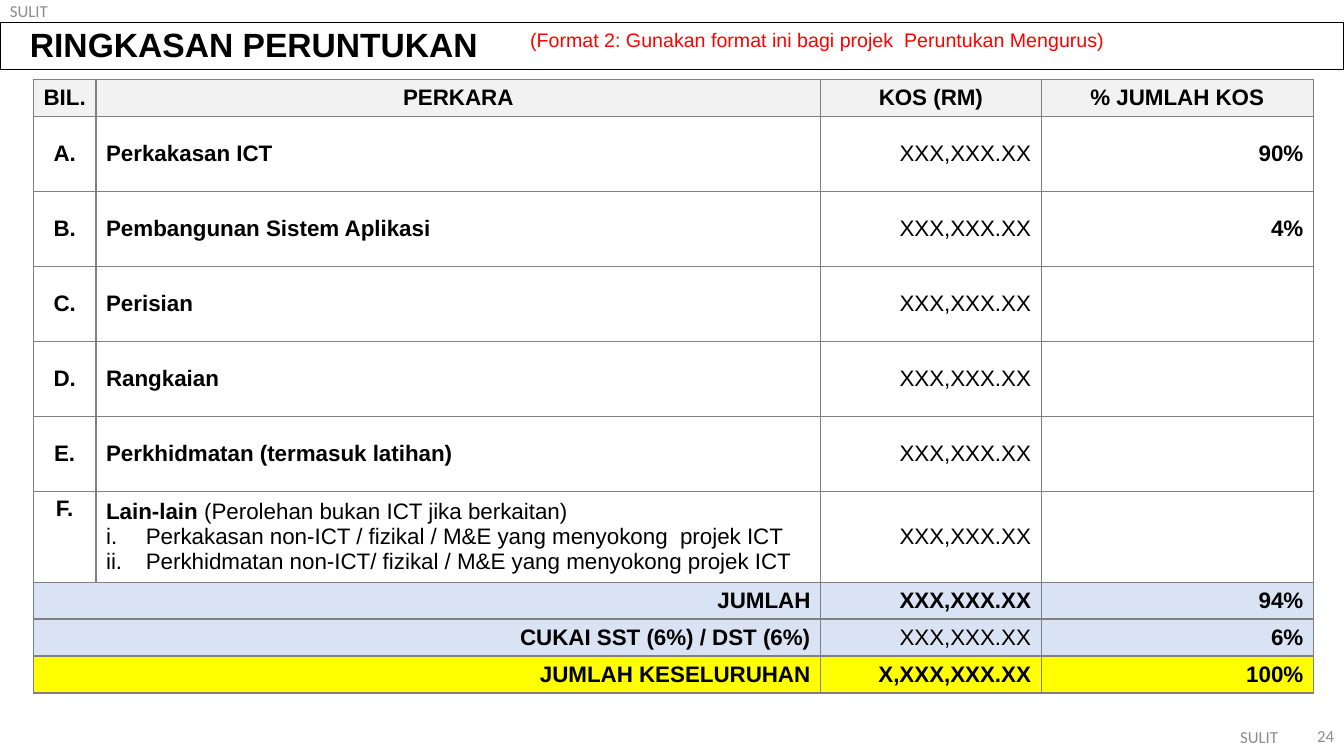
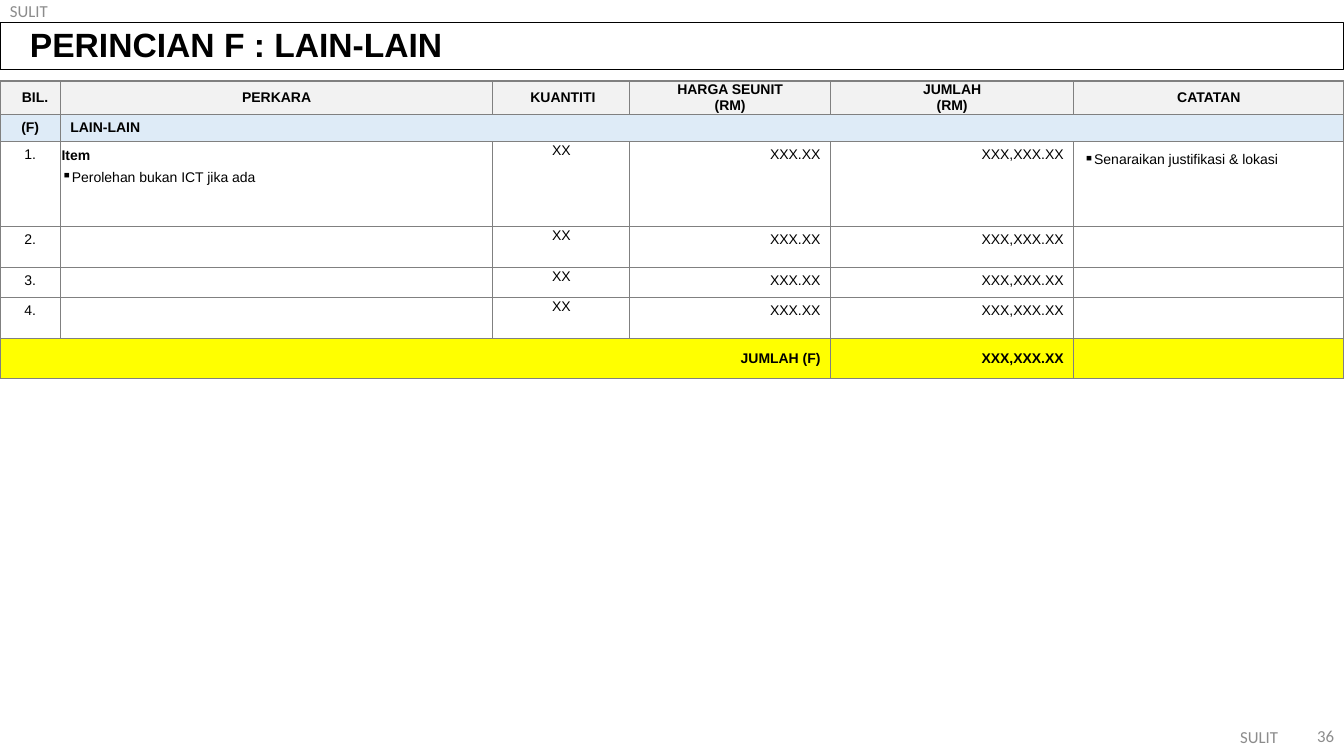
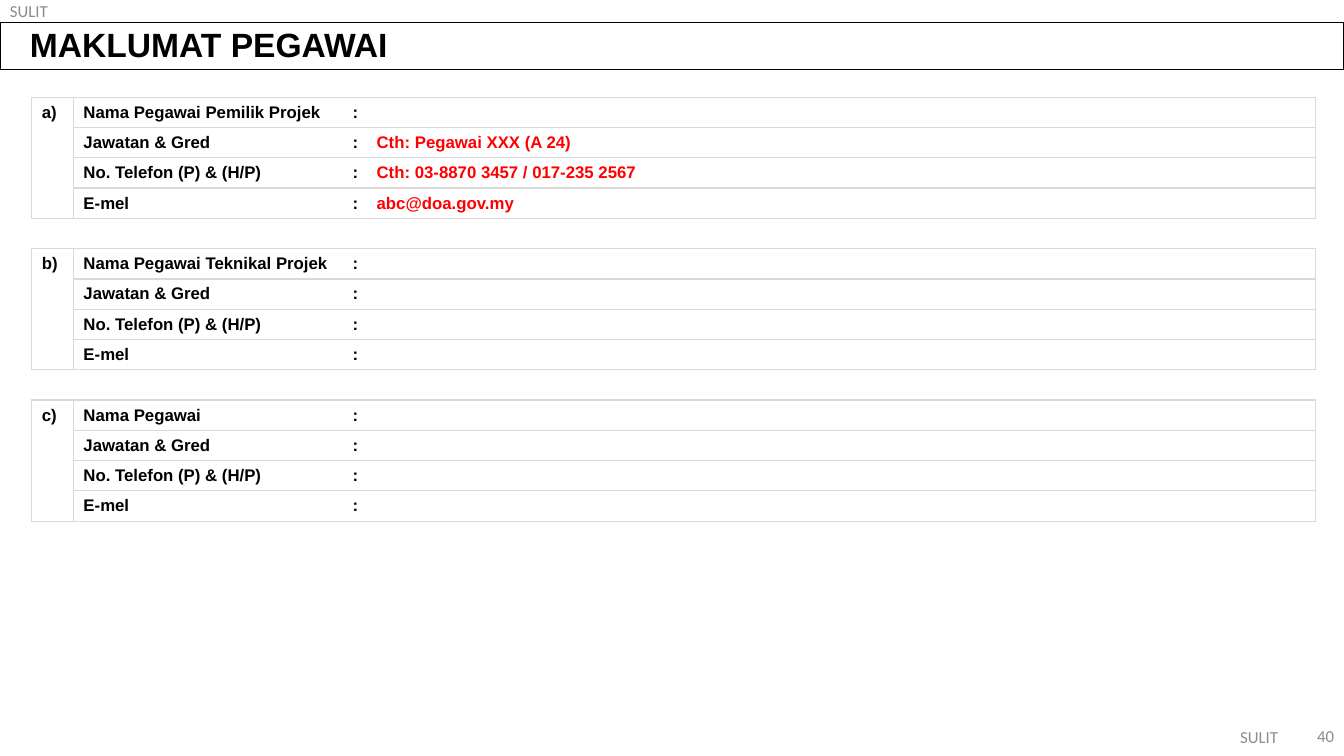
from lxml import etree
from pptx import Presentation, util as u
from pptx.dml.color import RGBColor
from pptx.enum import text as t
from pptx.oxml.ns import qn

Cm = u.Cm


class Theme:
    black, red, gray = "000000", "FF0000", "8C8C8C"
    line, pale = "808080", "D9D9D9"
    head, blue, sky, gold = "F2F2F2", "DAE3F3", "DEEBF7", "FFFF00"
    sans, foot = "Arial", "Calibri"
    title, note, big, mid, small = 24, 14, 16, 12, 10


ALIGN = {"l": t.PP_ALIGN.LEFT, "c": t.PP_ALIGN.CENTER, "r": t.PP_ALIGN.RIGHT}
ANCHOR = {"t": t.MSO_ANCHOR.TOP, "m": t.MSO_ANCHOR.MIDDLE}
# Line prefix: indent, bullet tag, bullet attributes
MARKS = {
    "▪ ": (Cm(0.25), "a:buChar", {"char": "▪"}),
    "# ": (Cm(1), "a:buAutoNum", {"type": "romanLcPeriod"}),
}


def write(frame, words, size, al="l", ink=Theme.black, face=Theme.sans,
          space=None, left=0):
    """Fill a frame line by line; **text** is bold."""
    frame.word_wrap = True
    for i, line in enumerate(words.split("\n")):
        par = frame.add_paragraph() if i else frame.paragraphs[0]
        par.alignment = ALIGN[al]
        if space:
            par.line_spacing = space
        props = par._p.get_or_add_pPr()
        if left:
            props.set("marL", str(left))
        if line[:2] in MARKS:
            pad, tag, attrs = MARKS[line[:2]]
            props.set("marL", str(pad))
            props.set("indent", str(-pad))
            etree.SubElement(props, qn(tag), attrs)
            line = line[2:]
        for j, part in enumerate(line.split("**")):
            if part:
                run = par.add_run()
                run.text = part
                look = {"size": u.Pt(size), "name": face, "bold": j % 2 == 1}
                for key, val in look.items():
                    setattr(run.font, key, val)
                run.font.color.rgb = RGBColor.from_string(ink)
        if not line:
            par._p.get_or_add_endParaRPr().set("sz", str(size * 100))


def dress(cell, words, size, bg=None, anc="m", ins=None, sides="LRTB",
          edge=Theme.line, **fmt):
    """Write a cell, then set its fill, insets and borders."""
    write(cell.text_frame, words, size, **fmt)
    cell.vertical_anchor = ANCHOR[anc]
    if ins is not None:
        for side in ("left", "right", "top", "bottom"):
            setattr(cell, "margin_" + side, ins)
    if bg:
        cell.fill.solid()
        cell.fill.fore_color.rgb = RGBColor.from_string(bg)
    else:
        cell.fill.background()
    props = cell._tc.get_or_add_tcPr()
    for i, side in enumerate("LRTB"):
        ln = etree.Element(qn("a:ln" + side), {"w": str(u.Pt(1))})
        if side in sides:
            paint = etree.SubElement(ln, qn("a:solidFill"))
            etree.SubElement(paint, qn("a:srgbClr"), {"val": edge})
        else:
            etree.SubElement(ln, qn("a:noFill"))
        props.insert(i, ln)


deck = Presentation()
deck.slide_width, deck.slide_height = Cm(33.87), Cm(19.05)
plain = deck.slide_layouts[5]

# Slides: title, page number, table place, columns and rows
plans = [
    ("RINGKASAN PERUNTUKAN", "24", (0.84, 2), [1.58, 18.26, 5.56, 6.86],
     [0.93] + [1.89] * 5 + [2.27] + [0.93] * 3),
    ("PERINCIAN F : LAIN-LAIN", "36", (0, 2.04),
     [1.52, 10.9, 3.45, 5.06, 6.13, 6.81],
     [0.81, 0.66, 2.14, 1.03, 0.76, 1.03, 1.01]),
    ("MAKLUMAT PEGAWAI", "40", (0.8, 2.45), [1.05, 6.78, 0.59, 23.92],
     [0.73] * 14),
]
slides, tables = [], []
for name, page, (x, y), cols, rows in plans:
    slide = deck.slides.add_slide(plain)
    head = slide.shapes.title
    head.left, head.top, head.width, head.height = (
        Cm(0), Cm(0.57), deck.slide_width, Cm(1.19))
    head.line.color.rgb = RGBColor.from_string(Theme.black)
    head.line.width = u.Pt(0.75)
    head.text_frame.auto_size = t.MSO_AUTO_SIZE.NONE
    head.text_frame.vertical_anchor = ANCHOR["m"]
    write(head.text_frame, f"**{name}**", Theme.title, space=0.9, left=Cm(0.5))

    # Page number, plus the two marks that go to the layout once
    notes = [(page, "r", 32.45, 18.03, 1.42, 1.02)]
    if not slides:
        notes += [("SULIT", "r", 30.66, 18.06, 1.8, 1.02),
                  ("SULIT", "l", 0, 0, 1.8, 0.56)]
    for words, al, *place in notes:
        box = slide.shapes.add_textbox(*map(Cm, place))
        box.text_frame.vertical_anchor = ANCHOR["m"]
        write(box.text_frame, words, Theme.mid, al, Theme.gray, Theme.foot)
        if words == "SULIT":
            plain.shapes._spTree.append(box._element)

    grid = slide.shapes.add_table(len(rows), len(cols), Cm(x), Cm(y),
                                  Cm(sum(cols)), Cm(sum(rows))).table
    grid.first_row = grid.horz_banding = False
    for col, wide in zip(grid.columns, cols):
        col.width = Cm(wide)
    for row, high in zip(grid.rows, rows):
        row.height = Cm(high)
    slides.append(slide)
    tables.append(grid)
costs, items, staff = tables

# Slide 1: note and cost summary
box = slides[0].shapes.add_textbox(Cm(13.11), Cm(0.58), Cm(20.4), Cm(0.86))
write(box.text_frame,
      "(Format 2: Gunakan format ini bagi projek  Peruntukan Mengurus)",
      Theme.note, ink=Theme.red)

cost = "XXX,XXX.XX"
others = ("**Lain-lain **(Perolehan bukan ICT jika berkaitan)\n"
          "# Perkakasan non-ICT / fizikal / M&E yang menyokong  projek ICT\n"
          "# Perkhidmatan non-ICT/ fizikal / M&E yang menyokong projek ICT")
lines = [
    ("**BIL.**", "**PERKARA**", "**KOS (RM)**", "**% JUMLAH KOS**"),
    ("**A.**", "**Perkakasan ICT**", cost, "**90%**"),
    ("**B.**", "**Pembangunan Sistem Aplikasi**", cost, "**4%**"),
    ("**C.**", "**Perisian**", cost, ""),
    ("**D.**", "**Rangkaian**", cost, ""),
    ("**E.**", "**Perkhidmatan (termasuk latihan)**", cost, ""),
    ("**F.**", others, cost, ""),
    ("", "**JUMLAH**", f"**{cost}**", "**94%**"),
    ("", "**CUKAI SST (6%) / DST (6%)**", cost, "**6%**"),
    ("", "**JUMLAH KESELURUHAN**", "**X,XXX,XXX.XX**", "**100%**"),
]
fills = [Theme.head] + [None] * 6 + [Theme.blue] * 2 + [Theme.gold]
for r, (line, bg) in enumerate(zip(lines, fills)):
    total = r > 6
    for c, words in enumerate(line):
        al = "cccc" if r == 0 else "crrr" if total else "clrr"
        sides = ("LTB", "RTB")[c] if total and c < 2 else "LRTB"
        anc = "t" if (r, c) == (6, 0) else "m"
        dress(costs.cell(r, c), words, Theme.big, bg, anc, sides=sides,
              al=al[c])

# Slide 2: item details
items.cell(1, 1).merge(items.cell(1, 4))
items.cell(6, 0).merge(items.cell(6, 3))
heads = ["BIL.", "PERKARA", "KUANTITI", "HARGA SEUNIT**\n**(RM)",
         "JUMLAH**\n**(RM)", "CATATAN"]
for c, words in enumerate(heads):
    dress(items.cell(0, c), f"**{words}**", Theme.small, Theme.head, ins=0,
          al="c", left={0: Cm(0.25), 2: Cm(0.08)}.get(c, 0))
band = ["**(F)**", "**LAIN-LAIN**", "", "", "", ""]
edges = ["LRTB", "LTB", "TB", "TB", "TB", "RTB"]
for c, (words, sides) in enumerate(zip(band, edges)):
    dress(items.cell(1, c), words, Theme.small, Theme.sky, sides=sides,
          al="l" if c else "c")
for n in range(1, 5):
    first = n == 1
    line = [f"{n}.",
            "**Item**\n▪ Perolehan bukan ICT jika ada" if first else "",
            "XX", "XXX.XX", cost,
            "▪ Senaraikan justifikasi & lokasi" if first else ""]
    for c, words in enumerate(line):
        dress(items.cell(n + 1, c), words, Theme.small, anc="t",
              ins=Cm(0.03) if c in (1, 2) else None, al="clcrrl"[c],
              space=u.Pt(15.1) if c in (1, 5) else None)
for c, words in enumerate(["**JUMLAH (F)**", "", "", "", f"**{cost}**", ""]):
    dress(items.cell(6, c), words, Theme.small, Theme.gold, al="r")

# Slide 3: officers, four rows each with a free row between
fields = ["Jawatan & Gred", "No. Telefon (P) & (H/P)", "E-mel"]
people = [
    ("a)", "Nama Pegawai Pemilik Projek",
     ["", "Cth: Pegawai XXX (A 24)", "Cth: 03-8870 3457 / 017-235 2567",
      "abc@doa.gov.my"]),
    ("b)", "Nama Pegawai Teknikal Projek", [""] * 4),
    ("c)", "Nama Pegawai", [""] * 4),
]
for p, (mark, name, values) in enumerate(people):
    for i, (field, value) in enumerate(zip([name] + fields, values)):
        side = "LR" + ("T" if i == 0 else "B" if i == 3 else "")
        line = [mark if i == 0 else "", field, ":", value]
        for c, (words, sides) in enumerate(zip(line,
                                               [side, "LTB", "TB", "RTB"])):
            dress(staff.cell(p * 5 + i, c), f"**{words}**" if words else "",
                  Theme.mid, sides=sides, edge=Theme.pale,
                  ink=Theme.red if c == 3 else Theme.black)
for r in (4, 9):
    for c in range(4):
        dress(staff.cell(r, c), "", Theme.mid, sides="TB", edge=Theme.pale)

deck.save("out.pptx")
